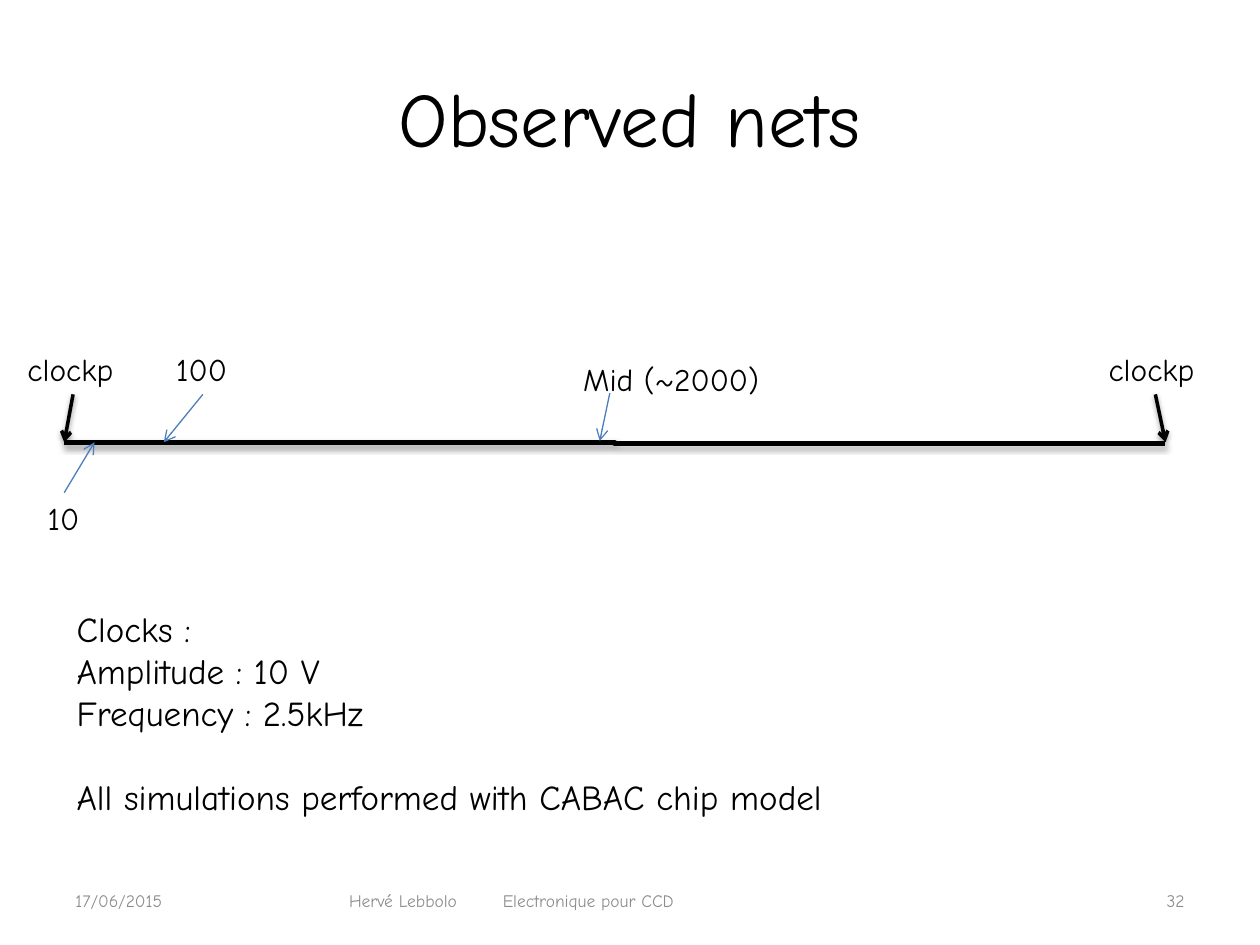
from lxml.etree import SubElement
from pptx import Presentation
from pptx.dml.color import RGBColor
from pptx.enum.shapes import MSO_CONNECTOR
from pptx.enum.text import MSO_ANCHOR, MSO_AUTO_SIZE, PP_ALIGN
from pptx.oxml.ns import qn
from pptx.util import Inches, Pt

FONT = "Comic Neue"
BLACK = RGBColor(0, 0, 0)
GREY = RGBColor(0x8C, 0x8C, 0x8C)
BLUE = RGBColor(0x4B, 0x7E, 0xBC)

TITLE = "Observed nets"
# text, label position, arrow start, arrow end, whether it marks a line end
PROBES = [
    ("clockp", (0.12, 2.73, 0.93), (0.58, 3.13), (0.51, 3.51), True),
    ("clockp", (8.7, 2.73, 0.93), (9.17, 3.13), (9.25, 3.51), True),
    ("Mid (~2000)", (4.53, 2.81, 1.67), (4.84, 3.12), (4.76, 3.5), False),
    ("10", (0.28, 3.91, 0.47), (0.51, 3.91), (0.75, 3.51), False),
    ("100", (1.3, 2.73, 0.62), (1.61, 3.13), (1.3, 3.51), False),
]
NOTES = [
    "Clocks :",
    "Amplitude : 10 V",
    "Frequency : 2.5kHz",
    "All simulations performed with CABAC chip model",
]
DATE = "17/06/2015"
CREDIT = "Hervé Lebbolo\tElectronique pour CCD"
NUMBER = "32"


def style(para, size, color=BLACK, align=PP_ALIGN.LEFT):
    para.alignment = align
    para.font.name = FONT
    para.font.size = Pt(size)
    para.font.color.rgb = color


def add_text(slide, lines, box, size):
    """Add an unwrapped box that fits its text, one paragraph per line."""
    frame = slide.shapes.add_textbox(*map(Inches, box)).text_frame
    frame.word_wrap = False
    frame.auto_size = MSO_AUTO_SIZE.SHAPE_TO_FIT_TEXT
    frame.text = "\n".join(lines)
    for para in frame.paragraphs:
        style(para, size)
    return frame


def add_foot(slide, text, left, width, align=PP_ALIGN.LEFT):
    box = map(Inches, (left, 6.95, width, 0.4))
    frame = slide.shapes.add_textbox(*box).text_frame
    frame.word_wrap = True
    frame.vertical_anchor = MSO_ANCHOR.MIDDLE
    frame.text = text
    style(frame.paragraphs[0], 10, GREY, align)
    return frame


def add_line(slide, start, end, color, width, kind=MSO_CONNECTOR.STRAIGHT,
             arrow=True, shade=None):
    """Add a connector; shade is the shadow's opacity and distance."""
    line = slide.shapes.add_connector(kind, *map(Inches, start + end))
    line.line.color.rgb = color
    line.line.width = Pt(width)
    props = line._element.spPr
    if arrow:
        SubElement(props.find(qn("a:ln")), qn("a:tailEnd"), type="arrow")
    effects = SubElement(props, qn("a:effectLst"))
    if shade:
        alpha, dist = shade
        shadow = SubElement(effects, qn("a:outerShdw"), blurRad=str(Pt(3.1)),
                            dist=str(Pt(dist)), dir="5400000", rotWithShape="0")
        black = SubElement(shadow, qn("a:srgbClr"), val=str(BLACK))
        SubElement(black, qn("a:alpha"), val=str(alpha * 1000))


def main():
    deck = Presentation()
    deck.slide_width, deck.slide_height = Inches(10), Inches(7.5)
    slide = deck.slides.add_slide(deck.slide_layouts[5])

    title = slide.shapes.title
    title.left, title.top = Inches(0.5), Inches(0.3)
    title.width, title.height = Inches(9), Inches(1.25)
    title.text_frame.vertical_anchor = MSO_ANCHOR.MIDDLE
    title.text_frame.text = TITLE
    style(title.text_frame.paragraphs[0], 44, align=PP_ALIGN.CENTER)

    add_line(slide, (0.51, 3.51), (9.25, 3.52), BLACK, 3,
             MSO_CONNECTOR.ELBOW, arrow=False, shade=(35, 1.8))
    for text, (left, top, width), start, end, is_end in PROBES:
        add_text(slide, [text], (left, top, width, 0.4), 18)
        if is_end:
            add_line(slide, start, end, BLACK, 2, shade=(38, 1.6))
        else:
            add_line(slide, start, end, BLUE, 0.75)

    notes = add_text(slide, NOTES, (0.51, 4.77, 6.69, 1.78), 20)
    notes.paragraphs[-1].space_before = Pt(24)

    add_foot(slide, DATE, 0.5, 1.51)
    credit = add_foot(slide, CREDIT, 1.54, 5.05)
    credit.margin_left = Inches(1.23)
    tabs = SubElement(credit.paragraphs[0]._p.get_or_add_pPr(), qn("a:tabLst"))
    # tab stops come before the default run properties
    tabs.getparent().insert(0, tabs)
    SubElement(tabs, qn("a:tab"), pos=str(Inches(1.22)), algn="l")
    add_foot(slide, NUMBER, 8.31, 1.19, PP_ALIGN.RIGHT)

    deck.save("out.pptx")


if __name__ == "__main__":
    main()
